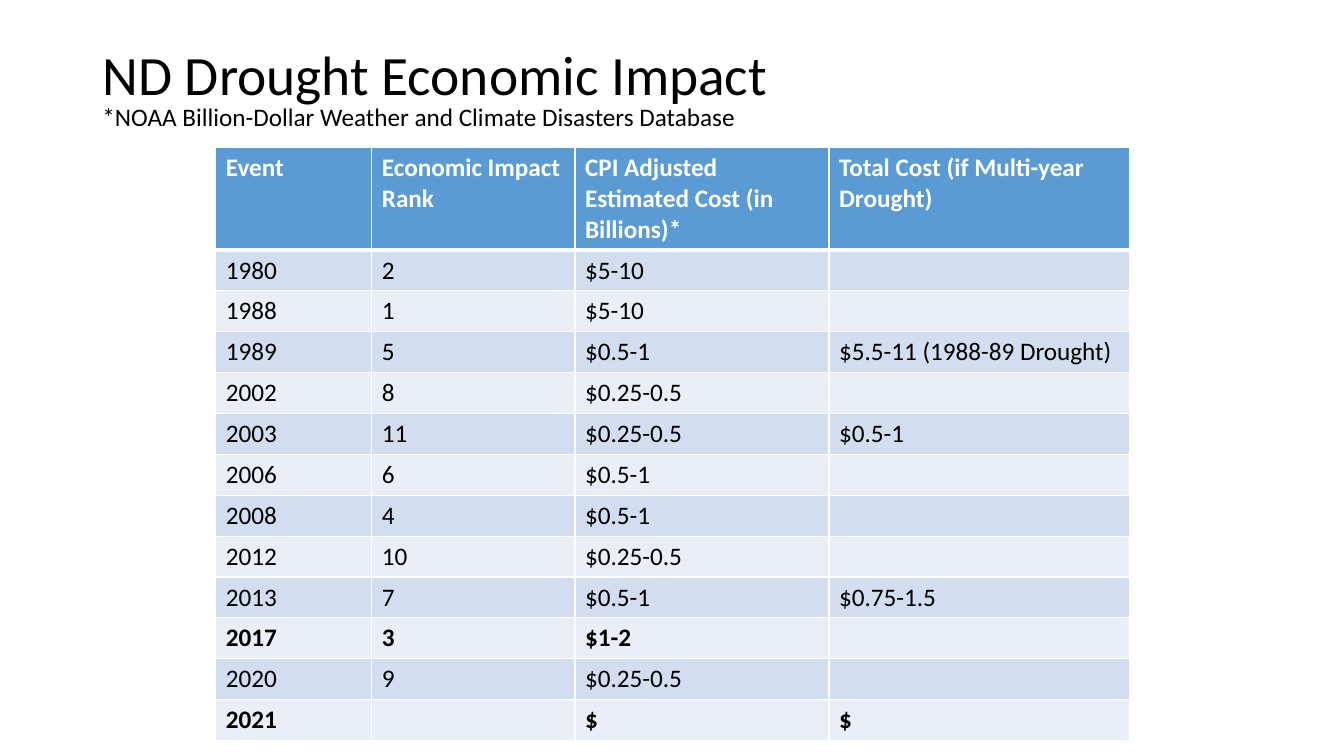
from lxml import etree
from pptx import Presentation
from pptx.dml.color import RGBColor
from pptx.enum import text
from pptx.oxml.ns import qn
from pptx.util import Cm, Pt

WHITE = RGBColor(0xFF, 0xFF, 0xFF)
BLACK = RGBColor(0, 0, 0)
BLUE = RGBColor(0x5B, 0x9B, 0xD5)
BANDS = [RGBColor(0xEA, 0xEF, 0xF7), RGBColor(0xD2, 0xDE, 0xEF)]

ROWS = [
    ("Event", "Economic Impact Rank", "CPI Adjusted Estimated Cost (in Billions)*",
     "Total Cost (if Multi-year Drought)"),
    ("1980", "2", "$5-10", ""),
    ("1988", "1", "$5-10", ""),
    ("1989", "5", "$0.5-1", "$5.5-11 (1988-89 Drought)"),
    ("2002", "8", "$0.25-0.5", ""),
    ("2003", "11", "$0.25-0.5", "$0.5-1"),
    ("2006", "6", "$0.5-1", ""),
    ("2008", "4", "$0.5-1", ""),
    ("2012", "10", "$0.25-0.5", ""),
    ("2013", "7", "$0.5-1", "$0.75-1.5"),
    ("2017", "3", "$1-2", ""),
    ("2020", "9", "$0.25-0.5", ""),
    ("2021", "", "$", "$"),
]
BOLD = {"Event", "2017", "2021"}
WIDTHS = [3.93, 5.12, 6.4, 7.57]


def style(para, size, color=BLACK, bold=False):
    form = {"name": "Calibri", "size": Pt(size), "bold": bold}
    for key, val in form.items():
        setattr(para.font, key, val)
    para.font.color.rgb = color


def edge(cell, side, width):
    line = etree.SubElement(cell._tc.get_or_add_tcPr(), qn(f"a:ln{side}"), w=str(Pt(width)))
    fill = etree.SubElement(line, qn("a:solidFill"))
    etree.SubElement(fill, qn("a:srgbClr"), val=str(WHITE))


deck = Presentation()
deck.slide_width, deck.slide_height = Cm(33.87), Cm(19.05)
slide = deck.slides.add_slide(deck.slide_layouts[5])

# Title
title = slide.shapes.title
title.left, title.top, title.width, title.height = Cm(2.33), Cm(1.01), Cm(29.21), Cm(1.91)
frame = title.text_frame
frame.text = "ND Drought Economic Impact"
frame.auto_size = text.MSO_AUTO_SIZE.NONE
frame.vertical_anchor = text.MSO_ANCHOR.MIDDLE
para = frame.paragraphs[0]
para.alignment = text.PP_ALIGN.LEFT
para.line_spacing = 0.9
style(para, 39.6)

# Table of drought events
table = slide.shapes.add_table(len(ROWS), len(WIDTHS), Cm(5.44), Cm(3.72),
                               Cm(sum(WIDTHS)), Cm(14.9)).table
for col, width in zip(table.columns, WIDTHS):
    col.width = Cm(width)
for r, row in enumerate(ROWS):
    head = r == 0
    table.rows[r].height = Cm(2.54 if head else 1.03)
    for c, words in enumerate(row):
        cell = table.cell(r, c)
        cell.text = words
        style(cell.text_frame.paragraphs[0], 18, WHITE if head else BLACK, row[0] in BOLD)
        for side in "LRTB":
            thick = (r, side) in ((0, "B"), (1, "T"))
            edge(cell, side, 3 if thick else 1)
        cell.fill.solid()
        cell.fill.fore_color.rgb = BLUE if head else BANDS[r % 2]

# Source note under the title
note = slide.shapes.add_textbox(Cm(2.33), Cm(2.44), Cm(16.48), Cm(1.03)).text_frame
note.word_wrap = False
note.auto_size = text.MSO_AUTO_SIZE.SHAPE_TO_FIT_TEXT
note.text = "*NOAA Billion-Dollar Weather and Climate Disasters Database"
style(note.paragraphs[0], 18)

deck.save("out.pptx")
